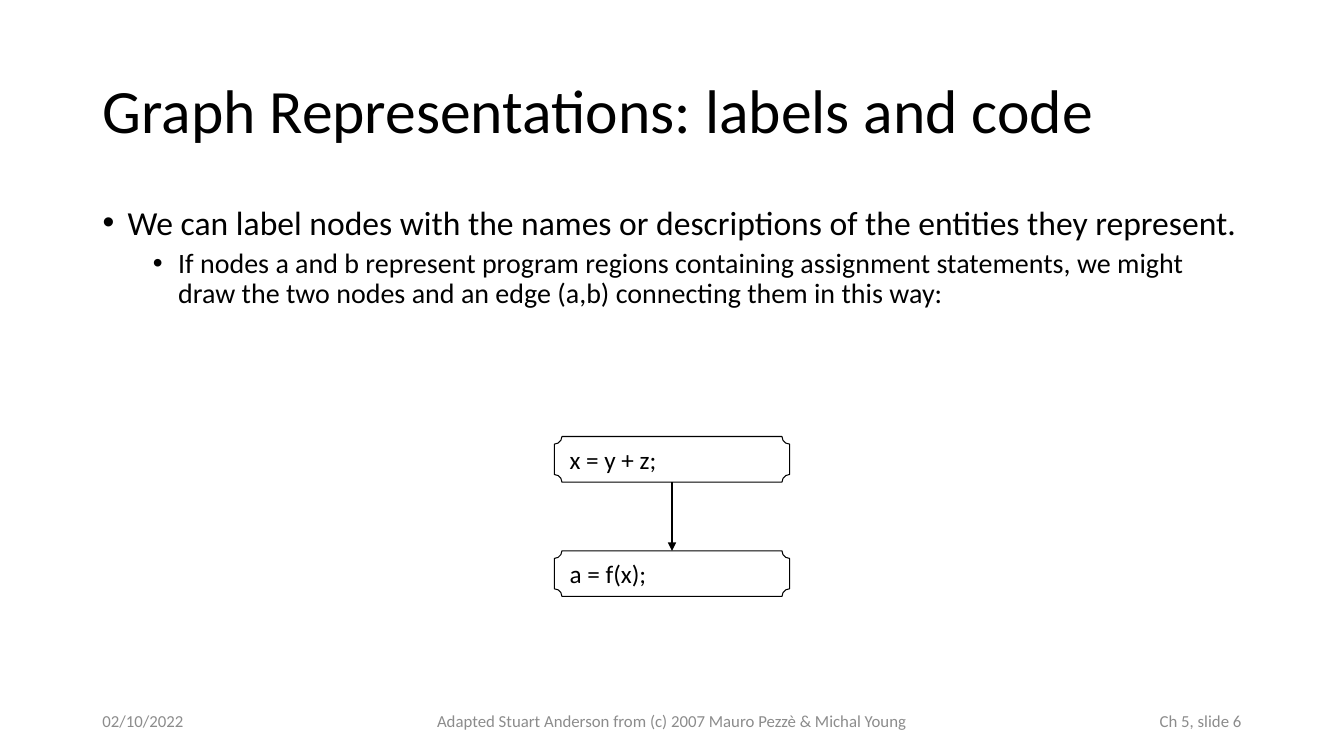
"""Build a slide on labelling graph nodes with code."""
from dataclasses import dataclass

from lxml import etree
from pptx import Presentation
from pptx.dml.color import RGBColor
from pptx.enum.shapes import MSO_CONNECTOR, MSO_SHAPE
from pptx.enum.text import MSO_ANCHOR, MSO_AUTO_SIZE, PP_ALIGN
from pptx.oxml.ns import qn
from pptx.util import Cm, Pt

LEFT, CENTER, RIGHT = PP_ALIGN.LEFT, PP_ALIGN.CENTER, PP_ALIGN.RIGHT
TOP, MIDDLE = MSO_ANCHOR.TOP, MSO_ANCHOR.MIDDLE
NO_FIT = MSO_AUTO_SIZE.NONE
PLAQUE, STRAIGHT = MSO_SHAPE.PLAQUE, MSO_CONNECTOR.STRAIGHT


@dataclass(frozen=True)
class Theme:
    """Font, colours and type sizes of the slide."""
    font: str = "Calibri"
    ink: RGBColor = RGBColor(0x00, 0x00, 0x00)
    muted: RGBColor = RGBColor(0x8C, 0x8C, 0x8C)
    paper: RGBColor = RGBColor(0xFF, 0xFF, 0xFF)
    title: int = 44
    body: tuple = (24, 20)
    code: int = 18
    footer: int = 12
    line: float = 0.75


theme = Theme()


def place(shape, left, top, width, height, anchor):
    """Position a shape in centimetres and return its wrapped text frame."""
    shape.left, shape.top = Cm(left), Cm(top)
    shape.width, shape.height = Cm(width), Cm(height)
    tf = shape.text_frame
    tf.word_wrap = True
    tf.auto_size = NO_FIT
    tf.vertical_anchor = anchor
    return tf


def write(p, text, size, color=theme.ink, align=LEFT):
    """Add one formatted run to a paragraph."""
    p.alignment = align
    r = p.add_run()
    r.text = text
    r.font.name = theme.font
    r.font.size = Pt(size)
    r.font.color.rgb = color


prs = Presentation()
prs.slide_width, prs.slide_height = Cm(33.87), Cm(19.05)
s = prs.slides.add_slide(prs.slide_layouts[1])
s.background.fill.solid()
s.background.fill.fore_color.rgb = theme.paper

margin, content_width = 2.33, 29.21
tf = place(s.shapes.title, margin, 1.01, content_width, 3.68, MIDDLE)
p = tf.paragraphs[0]
p.line_spacing = 0.9
write(p, "Graph Representations: labels and code", theme.title)

bullets = [
    "We can label nodes with the names or descriptions of the entities they represent.",
    "If nodes a and b represent program regions containing assignment statements, "
    "we might draw the two nodes and an edge (a,b) connecting them in this way:",
]
indent = 0.635
tf = place(s.placeholders[1], margin, 5.07, content_width, 12.09, TOP)
for level, text in enumerate(bullets):
    p = tf.add_paragraph() if level else tf.paragraphs[0]
    p.level = level
    p.line_spacing = 0.9
    p.space_before = Pt(5 if level else 10)
    write(p, text, theme.body[level])
    pPr = p._p.get_or_add_pPr()
    pPr.set("marL", str(Cm(indent * (1 + 2 * level))))
    pPr.set("indent", str(Cm(-indent)))
    etree.SubElement(pPr, qn("a:buFont"), typeface="Arial")
    etree.SubElement(pPr, qn("a:buChar"), char="•")

footers = [
    ("02/10/2022", margin, 3.81, LEFT),
    ("Adapted Stuart Anderson from (c) 2007 Mauro Pezzè & Michal Young", 10.67, 12.53, CENTER),
    ("Ch 5, slide 6", 26.74, 4.8, RIGHT),
]
for text, left, width, align in footers:
    tb = s.shapes.add_textbox(0, 0, 0, 0)
    tf = place(tb, left, 17.66, width, 1.01, MIDDLE)
    write(tf.paragraphs[0], text, theme.footer, theme.muted, align)

nodes = []
for i, code in enumerate(["x = y + z;", "a = f(x);"]):
    node = s.shapes.add_shape(PLAQUE, 0, 0, 0, 0)
    tf = place(node, 13.97, 11 + 2.88 * i, 5.93, 1.15, MIDDLE)
    node.adjustments[0] = 0.167
    node.shadow.inherit = False
    node.fill.background()
    node.line.color.rgb = theme.ink
    node.line.width = Pt(theme.line)
    write(tf.paragraphs[0], code, theme.code)
    nodes.append(node)

edge = s.shapes.add_connector(STRAIGHT, 0, 0, 0, 0)
edge.begin_connect(nodes[0], 2)
edge.end_connect(nodes[1], 0)
edge.line.color.rgb = theme.ink
edge.line.width = Pt(theme.line)
etree.SubElement(edge.line._get_or_add_ln(), qn("a:tailEnd"), type="triangle")
etree.SubElement(edge._element.spPr, qn("a:effectLst"))

prs.save("out.pptx")
